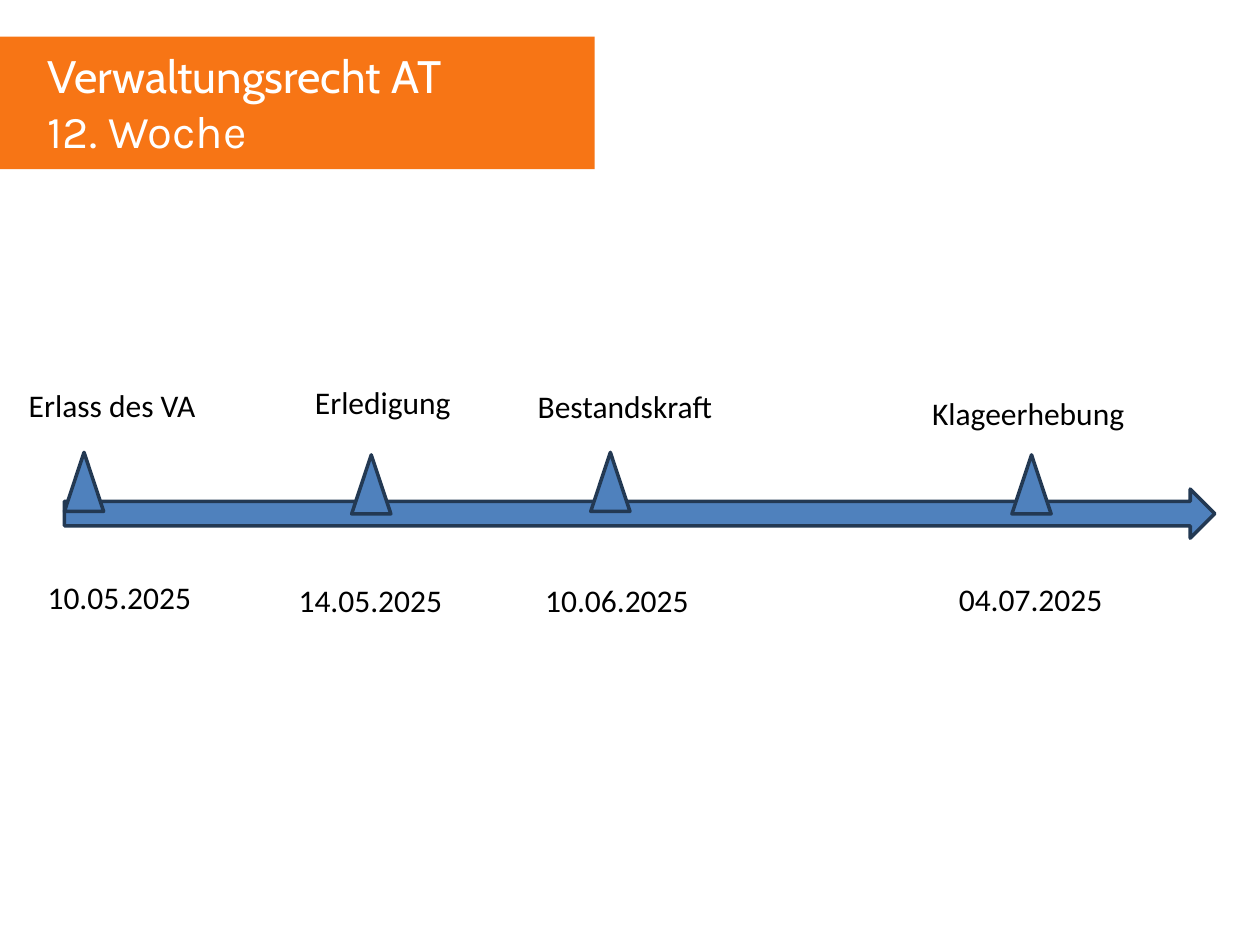
"""Build the administrative law timeline slide."""
from pptx import Presentation
from pptx.dml.color import RGBColor
from pptx.enum.shapes import MSO_SHAPE
from pptx.enum.text import MSO_ANCHOR, MSO_AUTO_SIZE, PP_ALIGN
from pptx.util import Cm, Pt

RECTANGLE = MSO_SHAPE.RECTANGLE
RIGHT_ARROW = MSO_SHAPE.RIGHT_ARROW
TRIANGLE = MSO_SHAPE.ISOSCELES_TRIANGLE
TOP = MSO_ANCHOR.TOP
GROW = MSO_AUTO_SIZE.SHAPE_TO_FIT_TEXT
LEFT = PP_ALIGN.LEFT

ORANGE = RGBColor(0xF7, 0x75, 0x15)
BLUE = RGBColor(0x4F, 0x81, 0xBD)
NAVY = RGBColor(0x23, 0x39, 0x53)
WHITE = RGBColor(0xFF, 0xFF, 0xFF)
BLACK = RGBColor(0x00, 0x00, 0x00)

EVENTS = [
    ("Erlass des VA", (0.33, 7.65, 4.06), (1.3, 9.12), "10.05.2025", (0.71, 11.53)),
    ("Erledigung", (6.1, 7.59, 4.52), (7.09, 9.17), "14.05.2025", (5.77, 11.58)),
    ("Bestandskraft", (10.59, 7.67, 4.06), (11.91, 9.12), "10.06.2025", (10.74, 11.58)),
    ("Klageerhebung", (18.54, 7.82, 4.5), (20.4, 9.17), "04.07.2025", (19.08, 11.56)),
]

deck = Presentation()
deck.slide_width = Cm(25.4)
deck.slide_height = Cm(19.05)
page = deck.slides.add_slide(deck.slide_layouts[5])


def add_figure(kind, left, top, width, height, fill, outline=None):
    figure = page.shapes.add_shape(kind, Cm(left), Cm(top), Cm(width), Cm(height))
    figure.shadow.inherit = False
    figure.fill.solid()
    figure.fill.fore_color.rgb = fill
    if outline is None:
        figure.line.fill.background()
    else:
        figure.line.color.rgb = outline
        figure.line.width = Pt(2)
    return figure


def add_caption(text, left, top, width, wrap):
    box = page.shapes.add_textbox(Cm(left), Cm(top), Cm(width), Cm(1.02))
    box.text_frame.word_wrap = wrap
    box.text_frame.auto_size = GROW
    para = box.text_frame.paragraphs[0]
    para.text = text
    para.font.name = "Calibri"
    para.font.size = Pt(18)
    para.font.color.rgb = BLACK


banner = add_figure(RECTANGLE, 0, 0.74, 11.99, 2.67, ORANGE)

title = page.shapes.title
banner.element.addnext(title.element)
title.left, title.top, title.width, title.height = Cm(0.71), Cm(0.84), Cm(11.99), Cm(2.49)
title.text_frame.text = "Verwaltungsrecht AT\n12. Woche"
title.text_frame.vertical_anchor = TOP
title.text_frame.word_wrap = True
title.text_frame.auto_size = GROW
for para, typeface in zip(title.text_frame.paragraphs, ("Cabin", "Karla")):
    para.alignment = LEFT
    para.font.name = typeface
    para.font.size = Pt(26)
    para.font.color.rgb = WHITE

add_figure(RIGHT_ARROW, 1.3, 9.86, 23.19, 0.99, BLUE, NAVY)

for label, label_place, marker_place, date, date_place in EVENTS:
    add_figure(TRIANGLE, *marker_place, 0.79, 1.19, BLUE, NAVY)
    add_caption(label, *label_place, wrap=True)
    add_caption(date, *date_place, 3.43, wrap=False)

deck.save("out.pptx")
